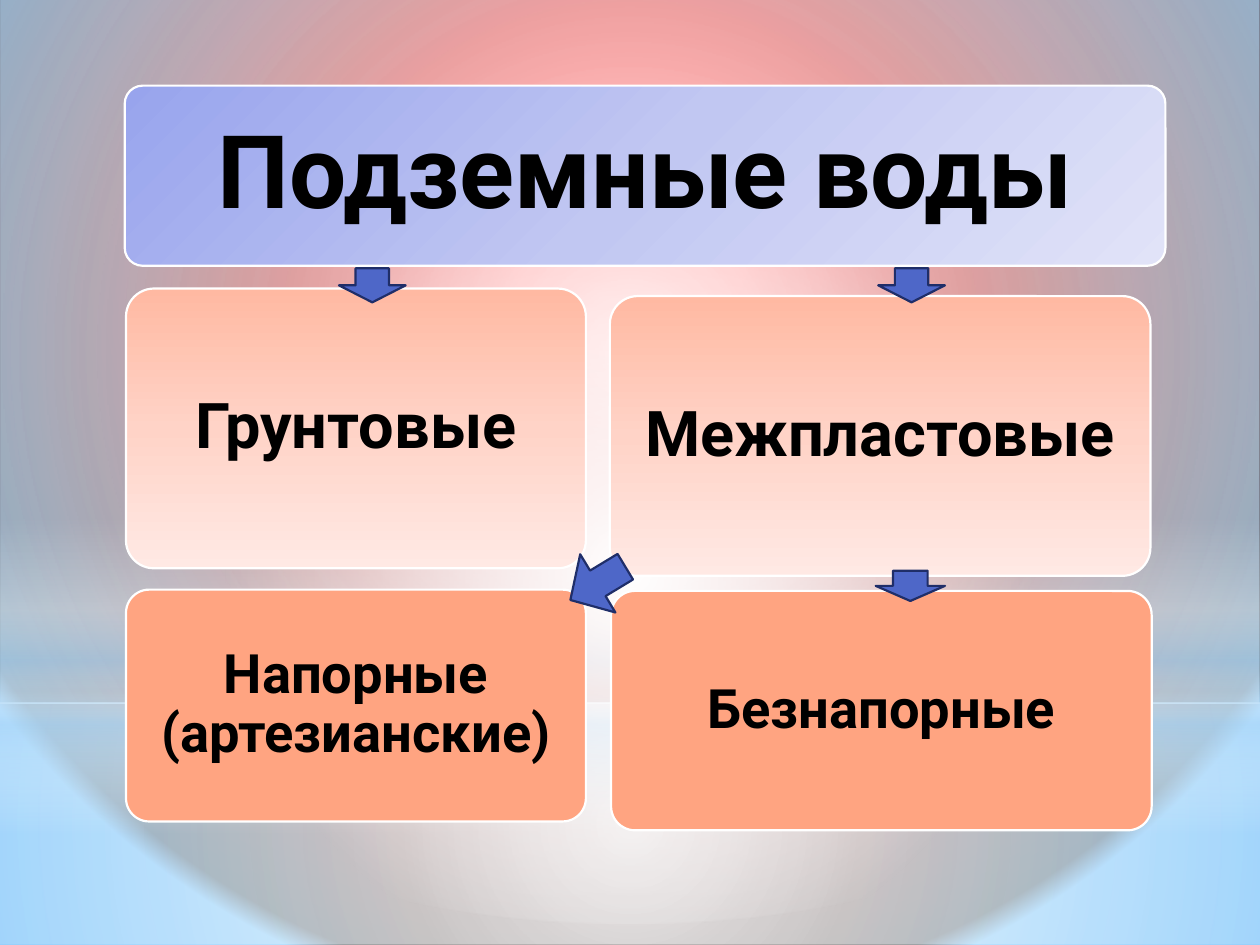
"""Build a slide classifying kinds of underground water."""
from dataclasses import dataclass
from typing import Optional, Union

from lxml import etree
from pptx import Presentation
from pptx.dml.color import RGBColor
from pptx.enum.shapes import MSO_SHAPE
from pptx.enum.text import MSO_ANCHOR, MSO_AUTO_SIZE, PP_ALIGN
from pptx.oxml.ns import qn
from pptx.util import Inches, Pt

RECTANGLE = MSO_SHAPE.RECTANGLE
ELLIPSE = MSO_SHAPE.OVAL
ROUNDED = MSO_SHAPE.ROUNDED_RECTANGLE
DOWN_ARROW = MSO_SHAPE.DOWN_ARROW
LEFT_ARROW = MSO_SHAPE.LEFT_ARROW
MIDDLE = MSO_ANCHOR.MIDDLE
CENTER = PP_ALIGN.CENTER
NO_AUTOFIT = MSO_AUTO_SIZE.NONE
FONT_NAME = "Roboto"
WHITE, PALE_BLUE, BLACK = "FFFFFF", "B4DCFA", "000000"


@dataclass(frozen=True)
class Gradient:
    """Stops of position, colour and opacity, with an angle or a focus."""
    stops: tuple
    angle: Optional[int] = None
    focus: tuple = (50, 50, 50, 50)


@dataclass(frozen=True)
class Panel:
    """A filled shape, possibly outlined, turned or labelled."""
    kind: MSO_SHAPE
    place: tuple
    fill: Union[str, Gradient]
    outline: Optional[str] = None
    adjustments: tuple = ()
    rotation: float = 0
    text: str = ""
    size: int = 0
    inset: float = 0


def box(place: tuple, fill: Union[str, Gradient], text: str = "",
        size: int = 0, inset: float = 0) -> Panel:
    """Describe a rounded box of the diagram."""
    return Panel(ROUNDED, place, fill, WHITE, (0.1,), 0, text, size, inset)


def arrow(kind: MSO_SHAPE, place: tuple, adjustments: tuple = (), rotation: float = 0) -> Panel:
    """Describe a block arrow of the diagram."""
    return Panel(kind, place, "4E67C8", "1F2E69", adjustments, rotation)


BACKGROUND = Gradient(((15, "FF0000", 100), (97, BLACK, 100), (100, "5BB9FF", 100)),
                      focus=(20, 10, 20, 60))
LOWER_GLOW = Gradient(((0, WHITE, 91), (37, WHITE, 76), (100, PALE_BLUE, 79)))
UPPER_GLOW = Gradient(((0, WHITE, 89), (48, WHITE, 62), (100, PALE_BLUE, 79)))
HORIZON = Gradient(((0, WHITE, 0), (29, WHITE, 30), (45, PALE_BLUE, 40),
                    (55, WHITE, 26), (65, PALE_BLUE, 60), (100, WHITE, 0)), 90)
HALO = Gradient(((0, WHITE, 100), (56, WHITE, 0)))
HEADER = Gradient(((0, "98A4ED", 100), (50, "C1C7F2", 100), (100, "E1E3F8", 100)), 45)
PEACH = Gradient(((0, "FFB9A2", 100), (50, "FFD3C7", 100), (100, "FFE9E4", 100)), 90)
ORANGE = "FFA481"

BACKDROP = (
    Panel(RECTANGLE, (0, 5.58, 10, 1.92), LOWER_GLOW),
    Panel(RECTANGLE, (0, 0, 10, 5.58), UPPER_GLOW),
    Panel(RECTANGLE, (0, 4.12, 10, 2.5), HORIZON),
    Panel(ELLIPSE, (0, 1.75, 10, 5.58), HALO),
)
DIAGRAM = (
    box((0.99, 0.68, 8.26, 1.43), HEADER),
    box((1, 2.29, 3.65, 2.22), PEACH, "Грунтовые", 36, 0.15),
    box((1, 4.68, 3.65, 1.84), ORANGE, "Напорные (артезианские)", 31, 0.13),
    box((4.84, 2.35, 4.29, 2.22), PEACH, "Межпластовые", 36, 0.15),
    box((4.85, 4.69, 4.29, 1.9), ORANGE, "Безнапорные", 31, 0.13),
    arrow(DOWN_ARROW, (2.69, 2.13, 0.53, 0.27)),
    arrow(DOWN_ARROW, (6.97, 2.13, 0.53, 0.27)),
    arrow(DOWN_ARROW, (6.95, 4.53, 0.55, 0.24)),
    arrow(LEFT_ARROW, (4.49, 4.36, 0.51, 0.54), (0.44, 0.5), 328.8),
)


def color(value: str) -> RGBColor:
    """Turn a hex string into a colour."""
    return RGBColor.from_string(value)


def gradient_element(gradient: Gradient):
    """Build the XML of a linear or circular gradient."""
    element = etree.Element(qn("a:gradFill"), rotWithShape="1")
    stop_list = etree.SubElement(element, qn("a:gsLst"))
    for position, value, opacity in gradient.stops:
        stop = etree.SubElement(stop_list, qn("a:gs"), pos=str(position * 1000))
        stop_color = etree.SubElement(stop, qn("a:srgbClr"), val=value)
        if opacity < 100:
            etree.SubElement(stop_color, qn("a:alpha"), val=str(opacity * 1000))
    if gradient.angle is not None:
        etree.SubElement(element, qn("a:lin"), ang=str(gradient.angle * 60000), scaled="0")
    else:
        circle = etree.SubElement(element, qn("a:path"), path="circle")
        sides = {side: str(share * 1000) for side, share in zip("ltrb", gradient.focus)}
        etree.SubElement(circle, qn("a:fillToRect"), sides)
    return element


def apply_fill(owner, fill: Union[str, Gradient]) -> None:
    """Fill a shape or a slide background with a colour or a gradient."""
    owner.fill.solid()
    owner.fill.fore_color.rgb = color(fill if isinstance(fill, str) else WHITE)


def use_gradient(element, gradient: Gradient) -> None:
    """Replace the first solid fill of an element by a gradient."""
    solid = next(element.iter(qn("a:solidFill")))
    solid.getparent().replace(solid, gradient_element(gradient))


def write_text(shape, text: str, size: int, inset: float) -> None:
    """Write centred bold text into a shape."""
    frame = shape.text_frame
    frame.text = text
    margins = dict.fromkeys(
        ("margin_left", "margin_top", "margin_right", "margin_bottom"), Inches(inset))
    settings = {"word_wrap": True, "auto_size": NO_AUTOFIT, "vertical_anchor": MIDDLE}
    for name, value in {**settings, **margins}.items():
        setattr(frame, name, value)
    paragraph = frame.paragraphs[0]
    paragraph.alignment = CENTER
    paragraph.line_spacing = 0.9
    font = paragraph.runs[0].font
    for name, value in {"name": FONT_NAME, "size": Pt(size), "bold": True}.items():
        setattr(font, name, value)
    font.color.rgb = color(BLACK)


def draw_panel(slide, panel: Panel) -> None:
    """Draw one panel on the slide."""
    shape = slide.shapes.add_shape(panel.kind, *map(Inches, panel.place))
    shape.shadow.inherit = False
    shape.rotation = panel.rotation
    for index, value in enumerate(panel.adjustments):
        shape.adjustments[index] = value
    apply_fill(shape, panel.fill)
    if isinstance(panel.fill, Gradient):
        use_gradient(shape.element, panel.fill)
    if panel.outline:
        shape.line.color.rgb = color(panel.outline)
        shape.line.width = Pt(1.25)
    else:
        shape.line.fill.background()
    if panel.text:
        write_text(shape, panel.text, panel.size, panel.inset)


def place_title(slide) -> None:
    """Move the title placeholder onto the header, above the shapes."""
    title = slide.shapes.title
    places = zip(("left", "top", "width", "height"), (1.03, 0.72, 8.18, 1.35))
    for name, value in places:
        setattr(title, name, Inches(value))
    write_text(title, "Подземные воды", 58, 0.24)
    title.element.getparent().append(title.element)


def main() -> None:
    """Build and save the presentation."""
    presentation = Presentation()
    presentation.slide_width, presentation.slide_height = Inches(10), Inches(7.5)
    slide = presentation.slides.add_slide(presentation.slide_layouts[5])
    apply_fill(slide.background, BACKGROUND)
    use_gradient(slide.element, BACKGROUND)
    for panel in BACKDROP + DIAGRAM:
        draw_panel(slide, panel)
    place_title(slide)
    presentation.save("out.pptx")


if __name__ == "__main__":
    main()
